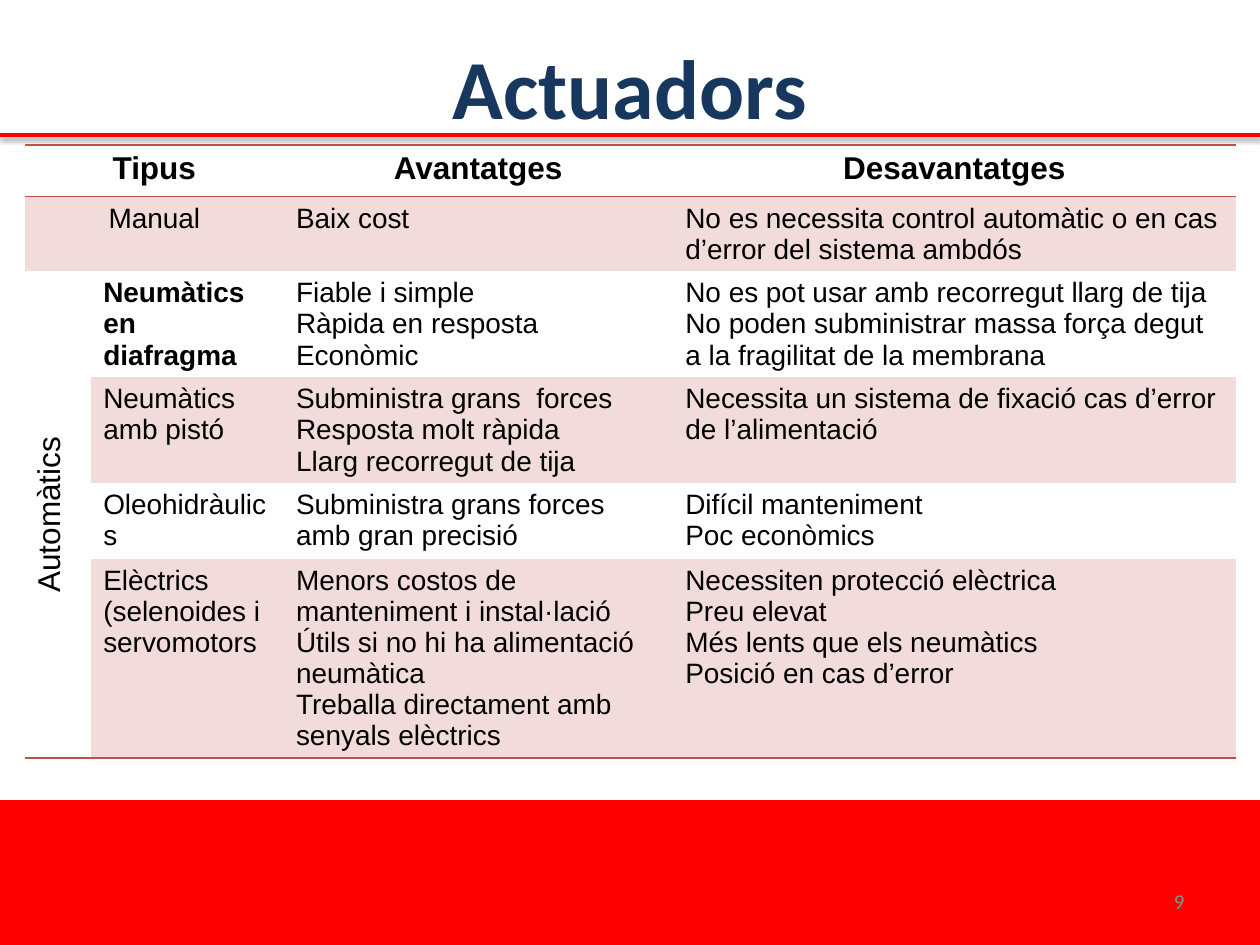
from lxml import etree
from pptx import Presentation
from pptx.dml.color import RGBColor
from pptx.enum.shapes import MSO_CONNECTOR, MSO_SHAPE
from pptx.enum.text import MSO_ANCHOR, PP_ALIGN
from pptx.oxml.ns import qn
from pptx.util import Inches, Pt

RED = RGBColor(0xFF, 0x00, 0x00)
NAVY = RGBColor(0x17, 0x37, 0x5E)
BLACK = RGBColor(0x00, 0x00, 0x00)
GREY = RGBColor(0x8C, 0x8C, 0x8C)
ROSE = RGBColor(0xF2, 0xDC, 0xDB)
BRICK = RGBColor(0xC0, 0x50, 0x4D)

LEFT, CENTER, RIGHT = PP_ALIGN.LEFT, PP_ALIGN.CENTER, PP_ALIGN.RIGHT
MIDDLE = MSO_ANCHOR.MIDDLE
RECTANGLE = MSO_SHAPE.RECTANGLE
STRAIGHT = MSO_CONNECTOR.STRAIGHT

PLAIN_TABLE_STYLE = "{2D5ABB26-0587-4C30-8999-92F81FD0307C}"
COLUMN_WIDTHS = [0.52, 1.53, 3.09, 4.47]
ROW_HEIGHTS = [0.41, 0.59, 0.84, 0.84, 0.6, 1.58]
HEADER_ROW, MANUAL_ROW, FIRST_AUTOMATIC_ROW = 0, 1, 2
LAST_ROW = len(ROW_HEIGHTS) - 1
DIAPHRAGM = "Neumàtics en diafragma"

ACTUATORS = [
    ["Tipus", None, "Avantatges", "Desavantatges"],
    ["Manual", None, "Baix cost",
     "No es necessita control automàtic o en cas d’error del sistema ambdós"],
    ["Automàtics", DIAPHRAGM,
     "Fiable i simple\nRàpida en resposta\nEconòmic",
     "No es pot usar amb recorregut llarg de tija\n"
     "No poden subministrar massa força degut a la fragilitat de la membrana"],
    [None, "Neumàtics amb pistó",
     "Subministra grans  forces\nResposta molt ràpida\nLlarg recorregut de tija",
     "Necessita un sistema de fixació cas d’error de l’alimentació"],
    [None, "Oleohidràulics", "Subministra grans forces amb gran precisió",
     "Difícil manteniment\nPoc econòmics"],
    [None, "Elèctrics (selenoides i servomotors",
     "Menors costos de manteniment i instal·lació\n"
     "Útils si no hi ha alimentació neumàtica\n"
     "Treballa directament amb senyals elèctrics",
     "Necessiten protecció elèctrica\nPreu elevat\n"
     "Més lents que els neumàtics\nPosició en cas d’error"],
]


def write_text(frame, text, *, size, font="Arial", color=BLACK, bold=False, align=LEFT):
    frame.text = text
    for paragraph in frame.paragraphs:
        paragraph.alignment = align
        paragraph.font.size = Pt(size)
        paragraph.font.name = font
        paragraph.font.color.rgb = color
        paragraph.font.bold = bold


def add_title(slide, text):
    title = slide.shapes.title
    title.left, title.top = Inches(0.5), Inches(0.22)
    title.width, title.height = Inches(9), Inches(0.93)
    title.text_frame.vertical_anchor = MIDDLE
    write_text(title.text_frame, text, size=48, font="Calibri", color=NAVY,
               bold=True, align=CENTER)


def add_title_rule(slide):
    rule = slide.shapes.add_connector(
        STRAIGHT, Inches(0), Inches(1.07), Inches(10), Inches(1.07))
    rule.line.color.rgb = RED
    rule.line.width = Pt(2)
    effects = etree.SubElement(rule._element.spPr, qn("a:effectLst"))
    shadow = etree.SubElement(effects, qn("a:outerShdw"), blurRad=str(Pt(3.1)),
                              dist=str(Pt(1.6)), dir="5400000", rotWithShape="0")
    shade = etree.SubElement(shadow, qn("a:srgbClr"), val=str(BLACK))
    etree.SubElement(shade, qn("a:alpha"), val="38000")


def add_footer_band(slide):
    band = slide.shapes.add_shape(
        RECTANGLE, Inches(0), Inches(6.35), Inches(10), Inches(1.15))
    band.shadow.inherit = False
    band.fill.solid()
    band.fill.fore_color.rgb = RED
    band.line.fill.background()


def add_page_number(slide, number):
    box = slide.shapes.add_textbox(
        Inches(7.17), Inches(6.95), Inches(2.33), Inches(0.4))
    box.text_frame.word_wrap = True
    box.text_frame.vertical_anchor = MIDDLE
    write_text(box.text_frame, number, size=12, font="Calibri", color=GREY, align=RIGHT)


def add_border(cell, side):
    border = etree.SubElement(cell._tc.get_or_add_tcPr(), qn(f"a:{side}"), w=str(Pt(1)))
    fill = etree.SubElement(border, qn("a:solidFill"))
    etree.SubElement(fill, qn("a:srgbClr"), val=str(BRICK))


def format_cell(cell, row, column):
    is_group = column == 0 and row >= FIRST_AUTOMATIC_ROW
    if row == HEADER_ROW:
        add_border(cell, "lnT")
    if row in (HEADER_ROW, LAST_ROW) or is_group and cell.is_merge_origin:
        add_border(cell, "lnB")
    if row % 2 and not is_group:
        cell.fill.solid()
        cell.fill.fore_color.rgb = ROSE
    else:
        cell.fill.background()
    if is_group:
        cell._tc.get_or_add_tcPr().set("vert", "vert270")


def add_actuator_table(slide):
    table = slide.shapes.add_table(
        len(ROW_HEIGHTS), len(COLUMN_WIDTHS), Inches(0.2), Inches(1.15),
        Inches(sum(COLUMN_WIDTHS)), Inches(sum(ROW_HEIGHTS))).table
    table.first_row = table.horz_banding = False
    table._tbl.tblPr.find(qn("a:tableStyleId")).text = PLAIN_TABLE_STYLE
    for column, width in zip(table.columns, COLUMN_WIDTHS):
        column.width = Inches(width)
    for row, height in zip(table.rows, ROW_HEIGHTS):
        row.height = Inches(height)
    for row in (HEADER_ROW, MANUAL_ROW):
        table.cell(row, 0).merge(table.cell(row, 1))
    table.cell(FIRST_AUTOMATIC_ROW, 0).merge(table.cell(LAST_ROW, 0))

    for row, entries in enumerate(ACTUATORS):
        for column, text in enumerate(entries):
            cell = table.cell(row, column)
            format_cell(cell, row, column)
            if text:
                is_header = row == HEADER_ROW
                write_text(
                    cell.text_frame, text,
                    size=18 if is_header or text == "Automàtics" else 16,
                    bold=is_header or text == DIAPHRAGM,
                    align=CENTER if is_header or column == 0 else LEFT)


def main():
    presentation = Presentation()
    presentation.slide_width = Inches(10)
    presentation.slide_height = Inches(7.5)
    slide = presentation.slides.add_slide(presentation.slide_layouts[5])
    add_title_rule(slide)
    add_footer_band(slide)
    add_title(slide, "Actuadors")
    add_actuator_table(slide)
    add_page_number(slide, "9")
    presentation.save("out.pptx")


if __name__ == "__main__":
    main()
